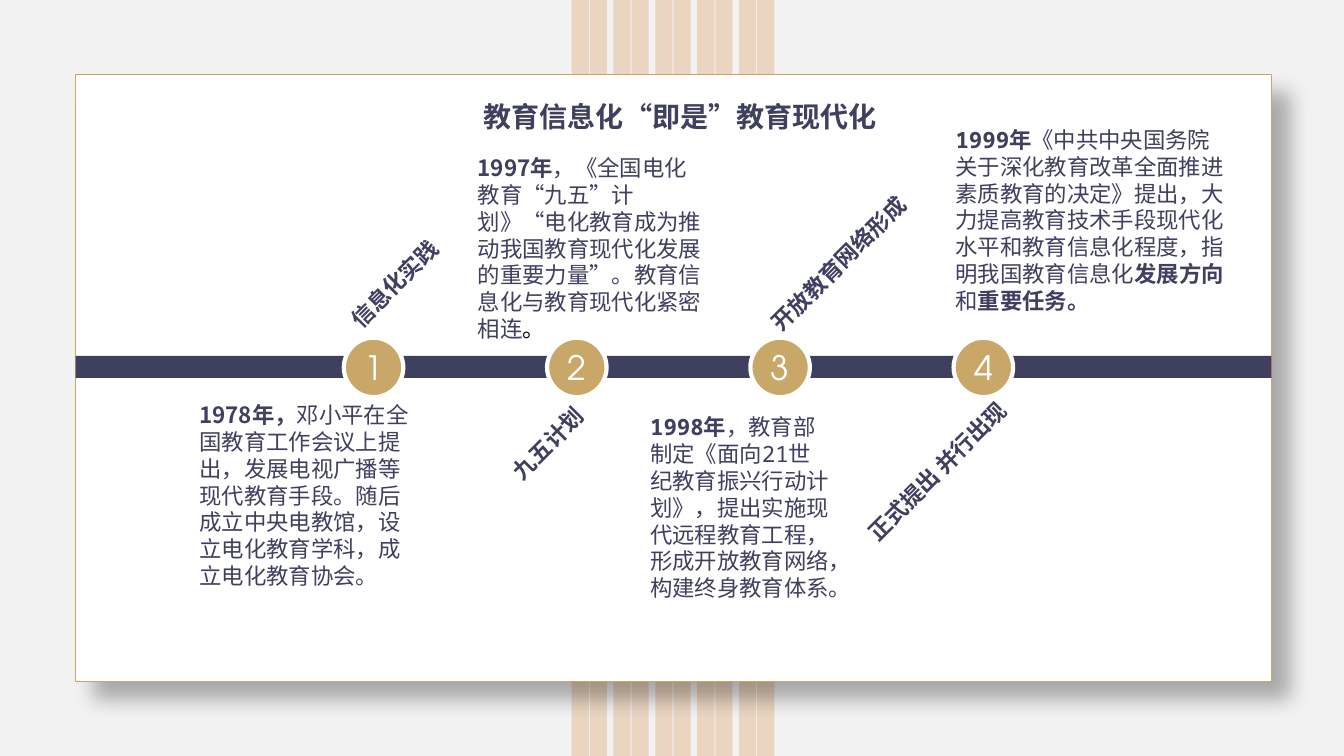
from lxml import etree
from pptx import Presentation
from pptx import util as u
from pptx.dml.color import RGBColor
from pptx.enum import lang, shapes, text
from pptx.oxml import ns

COLORS = {"back": "F2F2F2", "stripe": "EAD5C0", "card": "FFFFFF",
          "gold": "C9A769", "ink": "3F3F5F", "black": "000000"}
CJK, MONO, ROUND = "Noto Sans CJK SC", "Noto Sans Mono", "TeX Gyre Adventor"

TITLE = ("教育信息化“即是”教育现代化", (4.7, 0.94, 4.13, 0.44))
STAGES = [
    ("信息化实践", (3.25, 2.6, 1.39, 0.37)),
    ("九五计划", (4.89, 4.21, 1.1, 0.37)),
    ("开放教育网络形成", (7.33, 2.42, 2, 0.37)),
    ("正式提出 并行出现", (8.27, 4.45, 2.13, 0.37)),
]
EVENTS = [
    ((1.88, 3.93, 2.32, 1.99), CJK, [
        ("1978年，", True, "ink"),
        ("邓小平在全国教育工作会议上提出，发展电视广播等现代教育手段。"
         "随后成立中央电教馆，设立电化教育学科，成立电化教育协会。", False, "ink")]),
    ((4.64, 1.48, 2.45, 1.72), CJK, [
        ("1997年", True, "ink"),
        ("，《全国电化教育“九五”计划》“电化教育成为推动我国教育现代化发展的重要力量”。"
         "教育信息化与教育现代化紧密相连", False, "ink"),
        ("。", False, "black")]),
    ((6.35, 4.05, 2.01, 1.99), MONO, [
        ("1998年", True, "ink"),
        ("，教育部制定《面向21世纪教育振兴行动计划》，提出实施现代远程教育工程，"
         "形成开放教育网络，构建终身教育体系。", False, "ink")]),
    ((9.38, 1.2, 2.94, 1.99), MONO, [
        ("1999年", True, "ink"),
        ("《中共中央国务院关于深化教育改革全面推进素质教育的决定》提出，"
         "大力提高教育技术手段现代化水平和教育信息化程度，指明我国教育信息化", False, "ink"),
        ("发展方向", True, "ink"), ("和", False, "ink"), ("重要任务。", True, "ink")]),
]
STRIPE_LEFT, STRIPE_WIDTH, STRIPE_STEP, PAIR_GAP = 5.67, 0.17, 0.415, 0.18
CARD_LEFT, CARD_WIDTH = 0.75, 11.86
DOT_LEFT, DOT_TOP, DOT_SIZE, DOT_STEP = 3.41, 3.35, 0.59, 2.016


def color(name):
    return RGBColor.from_string(COLORS[name])


def set_all(target, values):
    for name, value in values.items():
        setattr(target, name, value)


def add_shape(page, kind, place, fill, line=None, width=0):
    shape = page.shapes.add_shape(kind, *map(u.Inches, place))
    shape.shadow.inherit = False
    shape.fill.solid()
    shape.fill.fore_color.rgb = color(fill)
    if line:
        shape.line.color.rgb = color(line)
        shape.line.width = u.Pt(width)
    else:
        shape.line.fill.background()
    return shape


def add_span(para, words, size, font, ink, bold=False):
    span = para.add_run()
    span.text = words
    span.font.color.rgb = color(ink)
    set_all(span.font, {"size": u.Pt(size), "bold": bold, "name": font,
                        "language_id": lang.MSO_LANGUAGE_ID.SIMPLIFIED_CHINESE})
    east = etree.SubElement(span._r.get_or_add_rPr(), ns.qn("a:ea"))
    east.set("typeface", CJK)


def add_text(page, place, spans, size, font=CJK, wrap=False, turn=0):
    box = page.shapes.add_textbox(*map(u.Inches, place))
    box.rotation = turn
    set_all(box.text_frame, {"word_wrap": wrap,
                             "auto_size": text.MSO_AUTO_SIZE.SHAPE_TO_FIT_TEXT})
    for words, bold, ink in spans:
        add_span(box.text_frame.paragraphs[0], words, size, font, ink, bold)


def add_shadow(shape):
    effects = shape._element.spPr.find(ns.qn("a:effectLst"))
    shadow = etree.SubElement(effects, ns.qn("a:outerShdw"), blurRad=str(u.Pt(15)),
                              dist=str(u.Pt(18)), dir=str(45 * 60000),
                              algn="tl", rotWithShape="0")
    tint = etree.SubElement(shadow, ns.qn("a:srgbClr"), val=COLORS["black"])
    etree.SubElement(tint, ns.qn("a:alpha"), val="30000")


def main():
    deck = Presentation()
    set_all(deck, {"slide_width": u.Inches(13.33), "slide_height": u.Inches(7.5)})
    page = deck.slides.add_slide(deck.slide_layouts[6])
    rect, oval = shapes.MSO_SHAPE.RECTANGLE, shapes.MSO_SHAPE.OVAL

    page.background.fill.solid()
    page.background.fill.fore_color.rgb = color("back")
    for pair in range(5):
        for offset in (0, PAIR_GAP):
            left = STRIPE_LEFT + pair * STRIPE_STEP + offset
            add_shape(page, rect, (left, 0, STRIPE_WIDTH, 7.5), "stripe")

    add_shadow(add_shape(page, rect, (CARD_LEFT, 0.74, CARD_WIDTH, 6.02),
                         "card", "gold", 0.25))
    add_shape(page, rect, (CARD_LEFT, 3.53, CARD_WIDTH, 0.22), "ink")

    for index, (label, place) in enumerate(STAGES):
        left = DOT_LEFT + index * DOT_STEP
        dot = add_shape(page, oval, (left, DOT_TOP, DOT_SIZE, DOT_SIZE), "gold", "card", 3)
        set_all(dot.text_frame, {"margin_left": 0, "margin_right": 0, "margin_top": 0,
                                 "margin_bottom": 0, "word_wrap": False,
                                 "vertical_anchor": text.MSO_ANCHOR.MIDDLE})
        para = dot.text_frame.paragraphs[0]
        para.alignment = text.PP_ALIGN.CENTER
        add_span(para, str(index + 1), 24, ROUND, "card")
        add_text(page, place, [(label, True, "ink")], 16, turn=315)

    for place, font, spans in EVENTS:
        add_text(page, place, spans, 16, font, wrap=True)
    add_text(page, TITLE[1], [(TITLE[0], True, "ink")], 20)
    deck.save("out.pptx")


if __name__ == "__main__":
    main()
